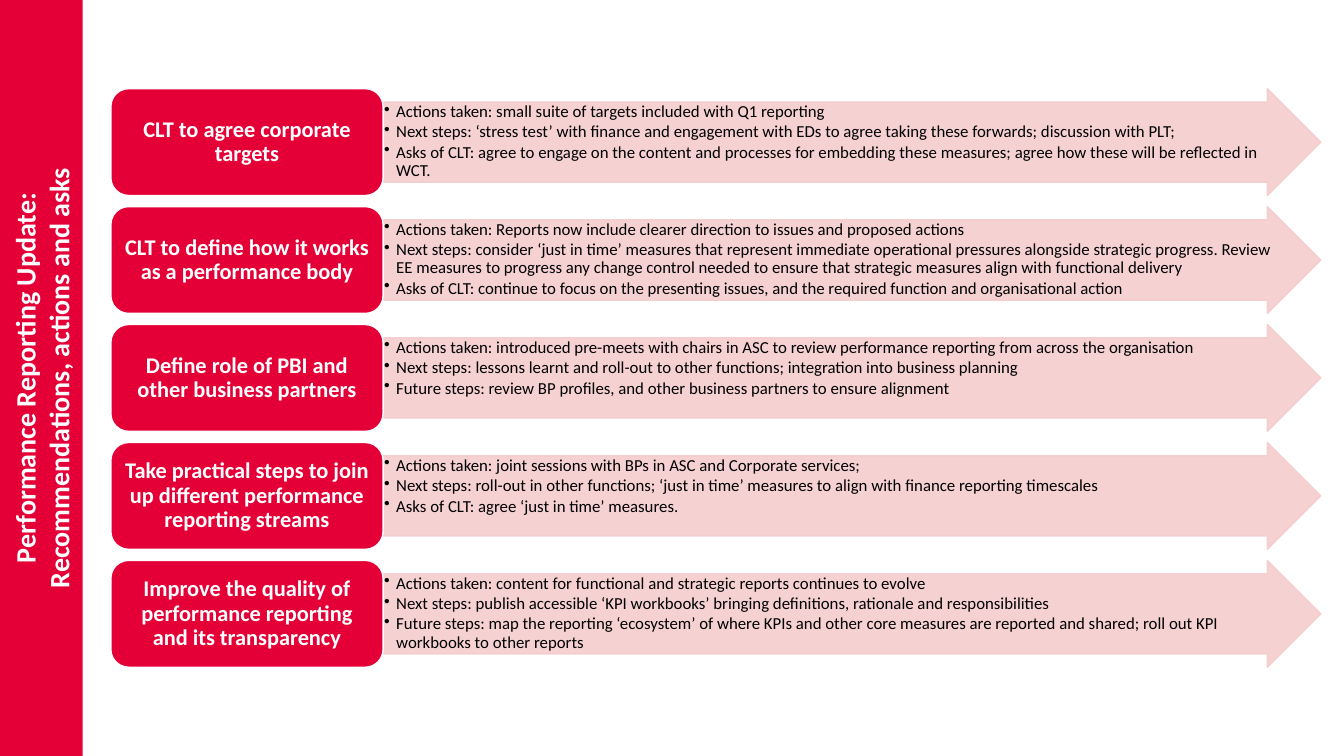
import pptx
import pptx.dml.color
import pptx.enum.shapes
import pptx.enum.text
import pptx.oxml.ns
import pptx.oxml.xmlchemy
import pptx.util

Inches, Pt = pptx.util.Inches, pptx.util.Pt
SHAPES = pptx.enum.shapes.MSO_SHAPE
ALIGN = pptx.enum.text.PP_ALIGN
ANCHOR = pptx.enum.text.MSO_ANCHOR

SLIDE_W, SLIDE_H = 13.33, 7.5
BAND_W = 0.82
ROWS_LEFT, ROWS_TOP, ROWS_W = 1.1, 0.88, 12.0
ROW_H, ROW_PITCH = 1.06, 1.17
LABEL_W = 2.7
RED, PINK, WHITE, BLACK = "E40037", "F5CCCE", "FFFFFF", "000000"

TITLE = ["Performance Reporting Update:", "Recommendations, actions and asks"]
RECOMMENDATIONS = [
    ("CLT to agree corporate targets", [
        "Actions taken: small suite of targets included with Q1 reporting",
        "Next steps: ‘stress test’ with finance and engagement with EDs to agree "
        "taking these forwards; discussion with PLT;",
        "Asks of CLT: agree to engage on the content and processes for embedding "
        "these measures; agree how these will be reflected in WCT."]),
    ("CLT to define how it works as a performance body", [
        "Actions taken: Reports now include clearer direction to issues and proposed actions",
        "Next steps: consider ‘just in time’ measures that represent immediate operational "
        "pressures alongside strategic progress. Review EE measures to progress any change "
        "control needed to ensure that strategic measures align with functional delivery",
        "Asks of CLT: continue to focus on the presenting issues, and the required "
        "function and organisational action"]),
    ("Define role of PBI and other business partners", [
        "Actions taken: introduced pre-meets with chairs in ASC to review performance "
        "reporting from across the organisation",
        "Next steps: lessons learnt and roll-out to other functions; integration into "
        "business planning",
        "Future steps: review BP profiles, and other business partners to ensure alignment"]),
    ("Take practical steps to join up different performance reporting streams", [
        "Actions taken: joint sessions with BPs in ASC and Corporate services;",
        "Next steps: roll-out in other functions; ‘just in time’ measures to align with "
        "finance reporting timescales",
        "Asks of CLT: agree ‘just in time’ measures."]),
    ("Improve the quality of performance reporting and its transparency", [
        "Actions taken: content for functional and strategic reports continues to evolve",
        "Next steps: publish accessible ‘KPI workbooks’ bringing definitions, rationale "
        "and responsibilities",
        "Future steps: map the reporting ‘ecosystem’ of where KPIs and other core measures "
        "are reported and shared; roll out KPI workbooks to other reports"]),
]


def rgb(hex_color):
    return pptx.dml.color.RGBColor.from_string(hex_color)


def write(shape, lines, size, color, bold, align, anchor, inset_x, inset_y):
    frame = shape.text_frame
    frame.text = "\n".join(lines)
    frame.word_wrap = True
    frame.auto_size = pptx.enum.text.MSO_AUTO_SIZE.NONE
    frame.vertical_anchor = anchor
    frame.margin_left = frame.margin_right = Inches(inset_x)
    frame.margin_top = frame.margin_bottom = Inches(inset_y)
    for paragraph in frame.paragraphs:
        paragraph.alignment = align
        for run in paragraph.runs:
            run.font.name = "Calibri"
            run.font.size = Pt(size)
            run.font.bold = bold
            run.font.color.rgb = rgb(color)


def add_filled(slide, kind, box, fill, line):
    shape = slide.shapes.add_shape(kind, *(Inches(length) for length in box))
    shape.shadow.inherit = False
    shape.fill.solid()
    shape.fill.fore_color.rgb = rgb(fill)
    shape.line.color.rgb = rgb(line)
    shape.line.width = Pt(1)
    return shape


def set_opacity(shape, percent):
    """Apply the opacity to both fill and outline."""
    for color in shape._element.spPr.iter(pptx.oxml.ns.qn("a:srgbClr")):
        alpha = pptx.oxml.xmlchemy.OxmlElement("a:alpha")
        alpha.set("val", str(percent * 1000))
        color.append(alpha)


def add_bullet(paragraph, indent):
    properties = paragraph._p.get_or_add_pPr()
    properties.set("marL", str(Inches(indent)))
    properties.set("indent", str(-Inches(indent)))
    bullet = pptx.oxml.xmlchemy.OxmlElement("a:buChar")
    bullet.set("char", "•")
    properties.append(bullet)


def title_band(slide, left, top, width, height):
    """Turn the title to read upwards inside the given upright box."""
    title = slide.shapes.title
    title.left = Inches(left + (width - height) / 2)
    title.top = Inches(top + (height - width) / 2)
    title.width, title.height = Inches(height), Inches(width)
    title.rotation = 270
    title.fill.solid()
    title.fill.fore_color.rgb = rgb(RED)
    write(title, TITLE, 20, WHITE, True, ALIGN.CENTER, ANCHOR.MIDDLE, 0, 0)


def recommendation_row(slide, left, top, width, height, heading, steps):
    arrow_box = (left + LABEL_W, top, width - LABEL_W, height)
    arrow = add_filled(slide, SHAPES.RIGHT_ARROW, arrow_box, PINK, PINK)
    arrow.adjustments[0] = 0.75
    arrow.adjustments[1] = 0.5
    set_opacity(arrow, 90)
    write(arrow, steps, 12, BLACK, False, ALIGN.LEFT, ANCHOR.TOP, 0.01, 0.01)
    for paragraph in arrow.text_frame.paragraphs:
        paragraph.line_spacing = 0.9
        paragraph.space_after = Pt(1.6)
        add_bullet(paragraph, 0.12)

    label_box = (left, top, LABEL_W, height)
    label = add_filled(slide, SHAPES.ROUNDED_RECTANGLE, label_box, RED, WHITE)
    write(label, [heading], 16, WHITE, True, ALIGN.CENTER, ANCHOR.MIDDLE, 0.07, 0.03)
    label.text_frame.paragraphs[0].line_spacing = 0.9


def main():
    deck = pptx.Presentation()
    deck.slide_width, deck.slide_height = Inches(SLIDE_W), Inches(SLIDE_H)
    slide = deck.slides.add_slide(deck.slide_layouts[5])
    title_band(slide, 0, 0, BAND_W, SLIDE_H)
    for row, (heading, steps) in enumerate(RECOMMENDATIONS):
        top = ROWS_TOP + row * ROW_PITCH
        recommendation_row(slide, ROWS_LEFT, top, ROWS_W, ROW_H, heading, steps)
    deck.save("out.pptx")


if __name__ == "__main__":
    main()
